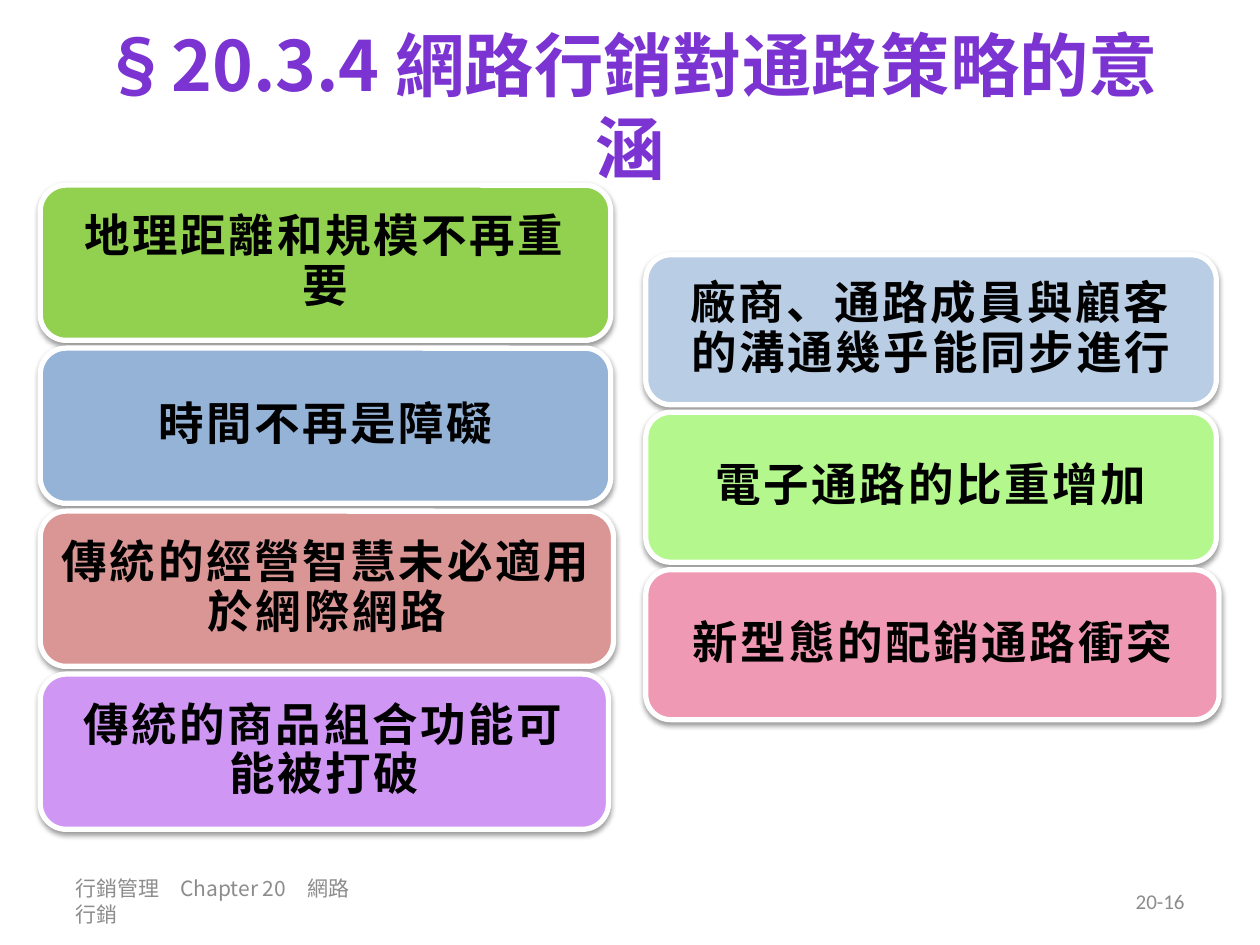
from dataclasses import dataclass

from lxml import etree
from pptx import Presentation
from pptx.dml.color import RGBColor
from pptx.enum.shapes import MSO_SHAPE
from pptx.enum.text import MSO_ANCHOR, PP_ALIGN
from pptx.oxml.ns import qn
from pptx.util import Pt

ROUNDED = MSO_SHAPE.ROUNDED_RECTANGLE
MIDDLE = MSO_ANCHOR.MIDDLE
LEFT, CENTER, RIGHT = PP_ALIGN.LEFT, PP_ALIGN.CENTER, PP_ALIGN.RIGHT


@dataclass(frozen=True)
class Theme:
    latin: str = "Calibri"
    cjk: str = "Noto Sans CJK SC"
    title: str = "7B34D2"
    footer: str = "8C8C8C"
    ink: str = "000000"
    border: str = "FFFFFF"
    title_size: float = 39.6
    card_size: float = 26
    footer_size: float = 12


THEME = Theme()

LEFT_CARDS = [
    ("地理距離和規模不再重要", "92D050", 326),
    ("時間不再是障礙", "95B3D7", 326),
    ("傳統的經營智慧未必適用於網際網路", "D99694", 327.6),
    ("傳統的商品組合功能可能被打破", "D096F4", 324.7),
]
RIGHT_CARDS = [
    ("廠商、通路成員與顧客的溝通幾乎能同步進行", "B9CDE5", 326),
    ("電子通路的比重增加", "B3F78D", 326),
    ("新型態的配銷通路衝突", "EF99B4", 327.6),
]


def style(paragraph, size, color, align, bold=False, latin=THEME.latin, spacing=0):
    paragraph.alignment = align
    font = paragraph.font
    font.size = Pt(size)
    font.bold = bold
    font.color.rgb = RGBColor.from_string(color)
    font.name = latin
    properties = paragraph._p.pPr.find(qn("a:defRPr"))
    etree.SubElement(properties, qn("a:ea"), typeface=THEME.cjk)
    if spacing:
        properties.set("spc", str(int(spacing * 100)))


def add_text_frame(slide, left, top, width, height):
    box = slide.shapes.add_textbox(Pt(left), Pt(top), Pt(width), Pt(height))
    frame = box.text_frame
    frame.word_wrap = True
    frame.vertical_anchor = MIDDLE
    return frame


def add_title(slide, left, top, width, height):
    heading = add_text_frame(slide, left, top, width, height).paragraphs[0]
    number = heading.add_run()
    number.text = "§20.3.4 "
    number.font.name = THEME.cjk
    heading.add_run().text = "網路行銷對通路策略的意涵"
    style(heading, THEME.title_size, THEME.title, CENTER, bold=True)


def add_card_shadow(card):
    card.shadow.inherit = False
    effects = card._element.spPr.find(qn("a:effectLst"))
    shadow = etree.SubElement(
        effects, qn("a:outerShdw"), blurRad=str(Pt(3.1)), dist=str(Pt(1.6)),
        dir="5400000", rotWithShape="0")
    tint = etree.SubElement(shadow, qn("a:srgbClr"), val=THEME.ink)
    etree.SubElement(tint, qn("a:alpha"), val="38000")


def add_card(slide, left, top, width, height, statement, color):
    card = slide.shapes.add_shape(ROUNDED, Pt(left), Pt(top), Pt(width), Pt(height))
    card.fill.solid()
    card.fill.fore_color.rgb = RGBColor.from_string(color)
    card.line.color.rgb = RGBColor.from_string(THEME.border)
    card.line.width = Pt(3)
    add_card_shadow(card)
    frame = card.text_frame
    frame.word_wrap = True
    frame.vertical_anchor = MIDDLE
    frame.margin_left = frame.margin_right = Pt(8)
    frame.margin_top = frame.margin_bottom = Pt(4)
    paragraph = frame.paragraphs[0]
    paragraph.text = statement
    paragraph.line_spacing = 0.9
    style(paragraph, THEME.card_size, THEME.ink, CENTER, bold=True, spacing=1.5)


def add_card_column(slide, left, top, card_height, cards):
    pitch = card_height * 1.05
    for row, (statement, color, width) in enumerate(cards):
        add_card(slide, left, top + row * pitch, width, card_height, statement, color)


def add_footer(slide, left, top, width, height):
    entries = [
        ("行銷管理　Chapter 20　網路行銷", left, 176.4, LEFT, THEME.cjk),
        ("20-16", left + width - 168, 168, RIGHT, THEME.latin),
    ]
    for wording, entry_left, entry_width, align, latin in entries:
        entry = add_text_frame(slide, entry_left, top, entry_width, height).paragraphs[0]
        entry.text = wording
        style(entry, THEME.footer_size, THEME.footer, align, latin=latin)


def main():
    presentation = Presentation()
    presentation.slide_width, presentation.slide_height = Pt(720), Pt(540)
    slide = presentation.slides.add_slide(presentation.slide_layouts[6])
    add_title(slide, 36, 9.4, 648, 102)
    add_footer(slide, 36, 500.5, 648, 28.8)
    add_card_column(slide, 23, 105.8, 88.7, LEFT_CARDS)
    add_card_column(slide, 369, 145.6, 85.7, RIGHT_CARDS)
    presentation.save("out.pptx")


if __name__ == "__main__":
    main()
